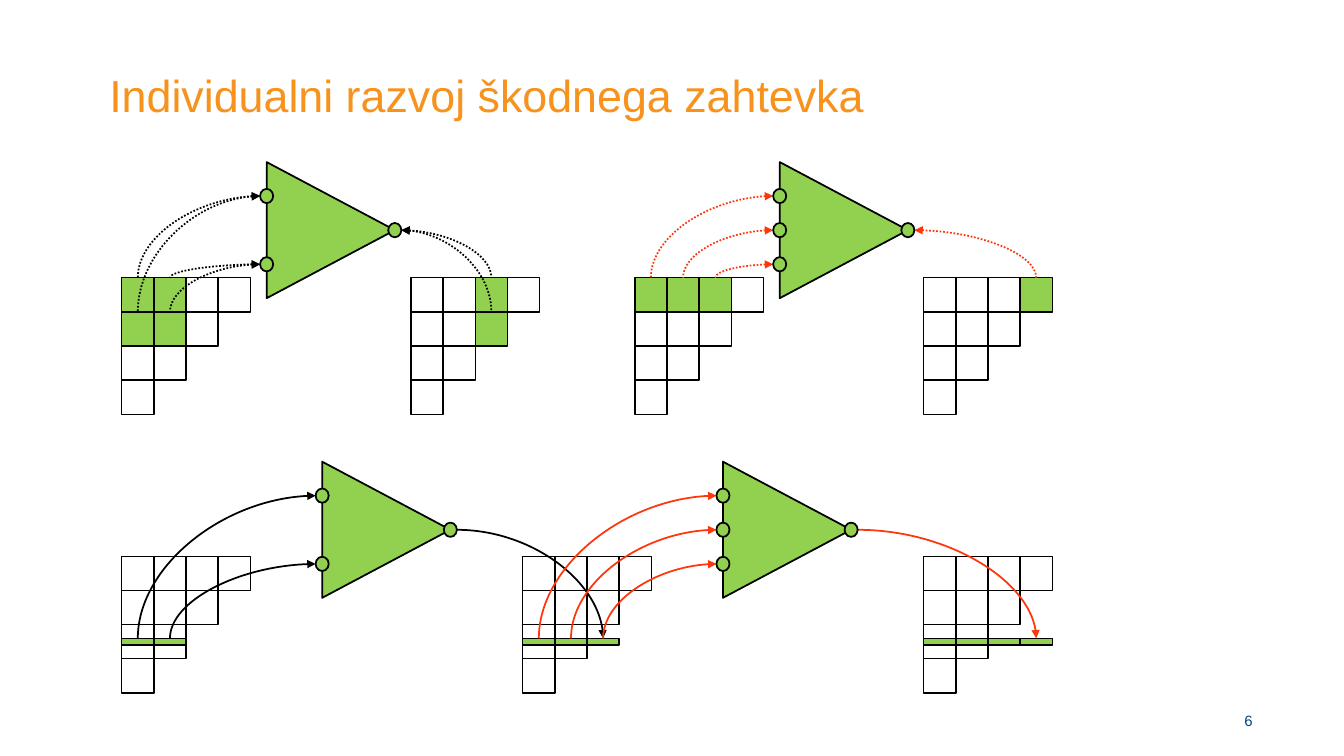
"""Build the slide on the individual development of a claim."""
import dataclasses
import typing

import lxml.etree
import pptx
import pptx.dml.color
import pptx.enum.dml
import pptx.enum.shapes
import pptx.enum.text
import pptx.oxml.ns
import pptx.util

Cm = pptx.util.Cm
Pt = pptx.util.Pt
RGB = pptx.dml.color.RGBColor
Shape = pptx.enum.shapes.MSO_SHAPE
Align = pptx.enum.text.PP_ALIGN
Anchor = pptx.enum.text.MSO_ANCHOR
qn = pptx.oxml.ns.qn


@dataclasses.dataclass(frozen=True)
class Theme:
    font: str = "Arial"
    title: RGB = RGB(0xF7, 0x93, 0x1D)
    number: RGB = RGB(0x08, 0x46, 0x7D)
    green: RGB = RGB(0x92, 0xD0, 0x50)
    black: RGB = RGB(0, 0, 0)
    red: RGB = RGB(0xFE, 0x36, 0x0B)
    title_size: float = 32
    number_size: float = 10.7
    cell_line: float = 1
    neuron_line: float = 1.25


THEME = Theme()
SIZE = 4
CELL_W, CELL_H = 0.81, 0.86
STRIP_H, STRIP_ROW = 0.17, 2
NEURON_W, NEURON_H = 3.23, 3.43
NODE_W, NODE_H = 0.33, 0.36
PORT_GAP = 0.86


@dataclasses.dataclass(frozen=True)
class Triangle:
    left: float
    top: float
    filled: tuple[tuple[int, int], ...] = ()
    strip: int = 0

    @property
    def strip_top(self) -> float:
        return self.top + STRIP_ROW * CELL_H + (CELL_H - STRIP_H) / 2


@dataclasses.dataclass(frozen=True)
class Neuron:
    left: float
    middle: float
    inputs: tuple[int, ...]
    color: RGB

    def node(self, port: int | None) -> tuple[float, float]:
        if port is None:
            return self.left + NEURON_W, self.middle
        return self.left, self.middle + port * PORT_GAP


@dataclasses.dataclass(frozen=True)
class Arc:
    neuron: Neuron
    port: int | None
    triangle: Triangle
    column: int
    row: int = 0


TOP, BOTTOM = 7.0, 14.02
TOP_MIDDLE, BOTTOM_MIDDLE = 5.8, 13.35
LEFT, RIGHT = 3.07, 23.28

PAST = Triangle(LEFT, TOP, ((0, 0), (0, 1), (1, 0), (1, 1)))
PAST_TARGET = Triangle(10.36, TOP, ((0, 2), (1, 2)))
LONGER = Triangle(16.0, TOP, ((0, 0), (0, 1), (0, 2)))
LONGER_TARGET = Triangle(RIGHT, TOP, ((0, 3),))
CLAIM = Triangle(LEFT, BOTTOM, strip=2)
CLAIM_NEXT = Triangle((LEFT + RIGHT) / 2, BOTTOM, strip=3)
CLAIM_FULL = Triangle(RIGHT, BOTTOM, strip=4)
TRIANGLES = (PAST, PAST_TARGET, LONGER, LONGER_TARGET, CLAIM, CLAIM_NEXT, CLAIM_FULL)

TRAIN_TWO = Neuron(6.72, TOP_MIDDLE, (-1, 1), THEME.black)
TRAIN_THREE = Neuron(19.65, TOP_MIDDLE, (-1, 0, 1), THEME.red)
APPLY_TWO = Neuron(8.12, BOTTOM_MIDDLE, (-1, 1), THEME.black)
APPLY_THREE = Neuron(18.22, BOTTOM_MIDDLE, (-1, 0, 1), THEME.red)
NEURONS = (TRAIN_TWO, TRAIN_THREE, APPLY_TWO, APPLY_THREE)

FLOWS = (
    (TRAIN_TWO, PAST, PAST_TARGET, (0, 1)),
    (TRAIN_THREE, LONGER, LONGER_TARGET, (0,)),
    (APPLY_TWO, CLAIM, CLAIM_NEXT, (0,)),
    (APPLY_THREE, CLAIM_NEXT, CLAIM_FULL, (0,)),
)


def write(tf: typing.Any, text: str, *, size: float, color: RGB,
          align: Align = Align.LEFT, anchor: Anchor = Anchor.TOP) -> None:
    """Put one formatted line of text into a text frame."""
    tf.word_wrap = True
    tf.vertical_anchor = anchor
    p = tf.paragraphs[0]
    p.alignment = align
    r = p.add_run()
    r.text = text
    r.font.name = THEME.font
    r.font.size = Pt(size)
    r.font.color.rgb = color


def add_outline(shapes: typing.Any, kind: Shape, left: float, top: float, width: float,
                height: float, line: float, filled: bool = True) -> typing.Any:
    """Add a black-edged shape, green or empty."""
    sp = shapes.add_shape(kind, Cm(left), Cm(top), Cm(width), Cm(height))
    sp.shadow.inherit = False
    if filled:
        sp.fill.solid()
        sp.fill.fore_color.rgb = THEME.green
    else:
        sp.fill.background()
    sp.line.color.rgb = THEME.black
    sp.line.width = Pt(line)
    return sp


def add_triangle(s: typing.Any, tri: Triangle) -> None:
    """Draw a run-off triangle and its claim strip as one group."""
    shapes = s.shapes.add_group_shape().shapes
    for row in range(SIZE):
        for column in range(SIZE - row):
            add_outline(shapes, Shape.RECTANGLE, tri.left + column * CELL_W,
                        tri.top + row * CELL_H, CELL_W, CELL_H,
                        THEME.cell_line, (row, column) in tri.filled)
    for column in range(tri.strip):
        add_outline(shapes, Shape.RECTANGLE, tri.left + column * CELL_W, tri.strip_top,
                    CELL_W, STRIP_H, THEME.cell_line)


def add_neuron(s: typing.Any, neuron: Neuron) -> None:
    """Draw a neuron with its input and output nodes as one group."""
    shapes = s.shapes.add_group_shape().shapes
    body = add_outline(shapes, Shape.ISOSCELES_TRIANGLE,
                       neuron.left + (NEURON_W - NEURON_H) / 2,
                       neuron.middle - NEURON_W / 2, NEURON_H, NEURON_W, THEME.neuron_line)
    body.rotation = 90
    for port in (*neuron.inputs, None):
        x, y = neuron.node(port)
        add_outline(shapes, Shape.OVAL, x - NODE_W / 2, y - NODE_H / 2,
                    NODE_W, NODE_H, THEME.neuron_line)


def add_arc(s: typing.Any, arc: Arc) -> None:
    """Draw a curved arrow between a neuron node and a cell."""
    tri, is_output = arc.triangle, arc.port is None
    x, y = arc.neuron.node(arc.port)
    x += NODE_W / 2 if is_output else -NODE_W / 2
    cell_x = tri.left + (arc.column + 0.5) * CELL_W
    cell_y = tri.strip_top if tri.strip else tri.top + arc.row * CELL_H
    c = s.shapes.add_connector(pptx.enum.shapes.MSO_CONNECTOR.CURVE,
                               Cm(x), Cm(y), Cm(cell_x), Cm(cell_y))
    c.line.color.rgb = arc.neuron.color
    c.line.width = Pt(THEME.neuron_line)
    if not tri.strip:
        c.line.dash_style = pptx.enum.dml.MSO_LINE.ROUND_DOT
    spPr = c.element.spPr
    spPr.find(qn("a:prstGeom")).set("prst", "curvedConnector2")
    end = "a:tailEnd" if is_output and tri.strip else "a:headEnd"
    lxml.etree.SubElement(spPr.find(qn("a:ln")), qn(end), type="triangle")
    lxml.etree.SubElement(spPr, qn("a:effectLst"))


def main() -> None:
    """Build and save the slide."""
    prs = pptx.Presentation()
    prs.slide_width, prs.slide_height = Cm(33.87), Cm(19.05)
    s = prs.slides.add_slide(prs.slide_layouts[5])
    title = s.shapes.title
    title.left, title.top, title.width, title.height = Cm(2.5), Cm(1.45), Cm(27.84), Cm(3.2)
    title.text_frame.margin_top = Cm(0.25)
    write(title.text_frame, "Individualni razvoj škodnega zahtevka",
          size=THEME.title_size, color=THEME.title)
    number = s.shapes.add_textbox(Cm(30.35), Cm(17.65), Cm(1.47), Cm(1.02))
    write(number.text_frame, "6", size=THEME.number_size, color=THEME.number,
          align=Align.RIGHT, anchor=Anchor.MIDDLE)
    for tri in TRIANGLES:
        add_triangle(s, tri)
    for neuron, source, target, rows in FLOWS:
        for row in rows:
            for column, port in enumerate(neuron.inputs):
                add_arc(s, Arc(neuron, port, source, column, row))
            add_arc(s, Arc(neuron, None, target, len(neuron.inputs), row))
    for neuron in NEURONS:
        add_neuron(s, neuron)
    prs.save("out.pptx")


if __name__ == "__main__":
    main()
